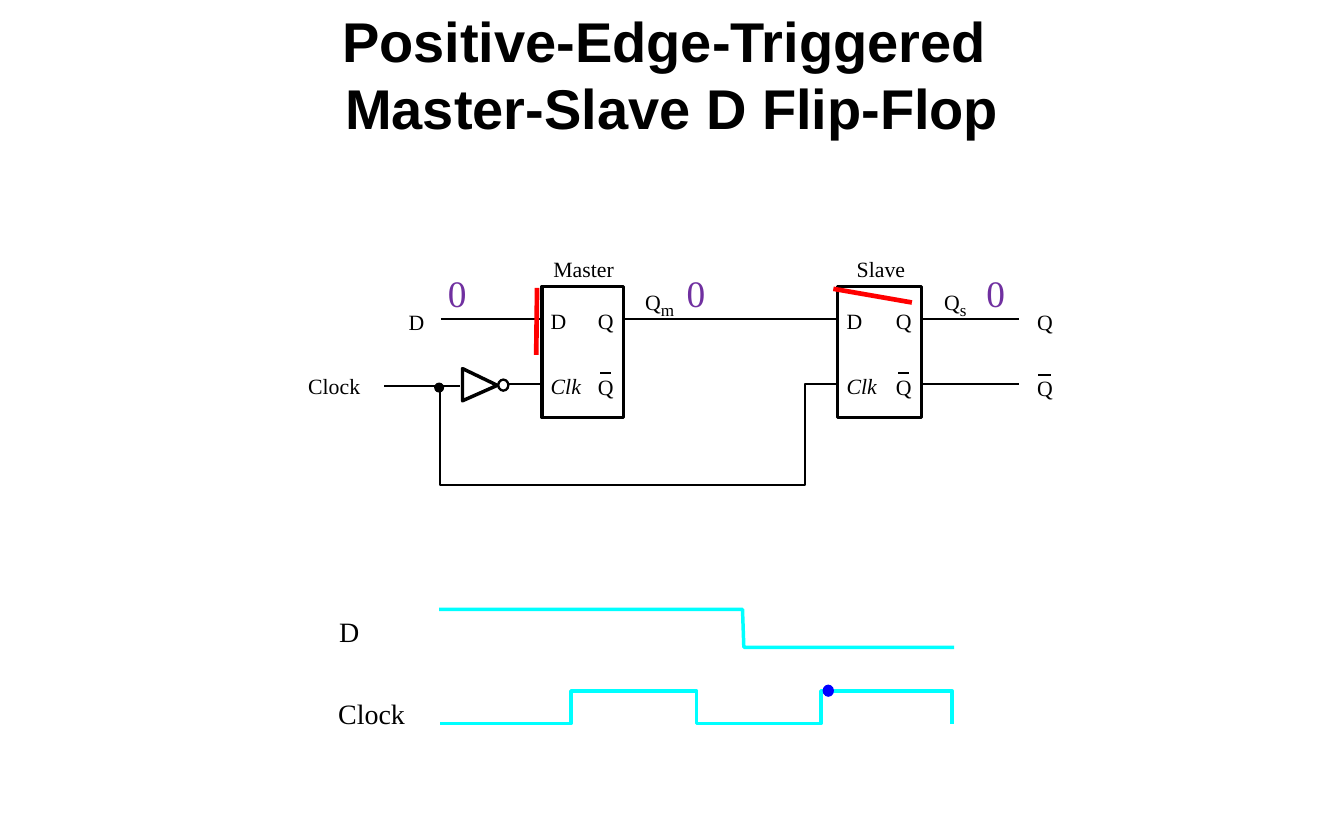
from dataclasses import dataclass

from lxml.etree import SubElement
from pptx import Presentation
from pptx.dml.color import RGBColor as Rgb
from pptx.enum.shapes import MSO_CONNECTOR as Connector, MSO_SHAPE as Preset
from pptx.enum.text import MSO_ANCHOR as Anchor, MSO_AUTO_SIZE as AutoSize, PP_ALIGN as Align
from pptx.oxml.ns import qn
from pptx.util import Cm, Pt


@dataclass(frozen=True)
class Theme:
    ink: Rgb = Rgb(0, 0, 0)
    paper: Rgb = Rgb(255, 255, 255)
    wave: Rgb = Rgb(0, 255, 255)
    marker: Rgb = Rgb(0, 0, 255)
    switch: Rgb = Rgb(255, 0, 0)
    state: Rgb = Rgb(0x70, 0x30, 0xA0)
    title_font: str = "Arial"
    label_font: str = "Times New Roman"
    title_size: float = 36
    state_size: float = 24
    signal_size: float = 18
    pin_size: float = 14
    subscript_size: float = 11
    hairline: float = 0.75
    thin: float = 1.38
    wire: float = 1.5
    outline: float = 2.25
    thick: float = 3


class Diagram:
    """Draws on one slide in a theme; all positions are in centimetres."""

    def __init__(self, slide, theme):
        self.slide = slide
        self.shapes = slide.shapes
        self.theme = theme

    def add_run(self, paragraph, words, size, font, color, bold=None, italic=None):
        run = paragraph.add_run()
        run.text = words
        run.font.size = Pt(size)
        run.font.name = font
        run.font.color.rgb = color
        run.font.bold = bold
        run.font.italic = italic

    def title(self, lines, left, top, width, height):
        heading = self.shapes.title
        heading.left, heading.top = Cm(left), Cm(top)
        heading.width, heading.height = Cm(width), Cm(height)
        frame = heading.text_frame
        frame.auto_size = AutoSize.NONE
        frame.vertical_anchor = Anchor.MIDDLE
        for number, line in enumerate(lines):
            paragraph = frame.add_paragraph() if number else frame.paragraphs[0]
            paragraph.alignment = Align.CENTER
            self.add_run(paragraph, line, self.theme.title_size, self.theme.title_font,
                         self.theme.ink, bold=True)

    def text(self, words, left, top, width, height, size, color=None, italic=None, padded=True):
        frame = self.shapes.add_textbox(Cm(left), Cm(top), Cm(width), Cm(height)).text_frame
        frame.word_wrap = False
        frame.auto_size = AutoSize.SHAPE_TO_FIT_TEXT
        if not padded:
            frame.margin_left = frame.margin_right = Cm(0)
            frame.margin_top = frame.margin_bottom = Cm(0)
        self.add_run(frame.paragraphs[0], words, size, self.theme.label_font,
                     color or self.theme.ink, italic=italic)

    def pin(self, words, left, top, width=0.48, italic=None):
        self.text(words, left, top, width, 0.61, self.theme.pin_size, italic=italic, padded=False)

    def subscripted(self, letter, subscript, left, width):
        self.pin(letter, left, 6.55)
        self.text(subscript, left + 0.36, 6.78, width, 0.48, self.theme.subscript_size,
                  padded=False)

    def paint(self, shape, fill, color, weight):
        shape.shadow.inherit = False
        if fill is None:
            shape.fill.background()
        else:
            shape.fill.solid()
            shape.fill.fore_color.rgb = fill
        shape.line.color.rgb = color
        shape.line.width = Pt(weight)

    def shape(self, preset, left, top, width, height, fill, color, weight):
        item = self.shapes.add_shape(preset, Cm(left), Cm(top), Cm(width), Cm(height))
        self.paint(item, fill, color, weight)

    def outline(self, points, color, weight, fill=None):
        """Join the points; a filled outline is also closed."""
        first, *rest = [(Cm(x), Cm(y)) for x, y in points]
        builder = self.shapes.build_freeform(*first)
        builder.add_line_segments(rest, close=fill is not None)
        self.paint(builder.convert_to_shape(), fill, color, weight)

    def line(self, x1, y1, x2, y2, weight, color=None):
        item = self.shapes.add_connector(Connector.STRAIGHT, Cm(x1), Cm(y1), Cm(x2), Cm(y2))
        item.line.color.rgb = color or self.theme.ink
        item.line.width = Pt(weight)
        SubElement(item._element.spPr, qn("a:effectLst"))

    def latch(self, name, name_left, name_width, left, width):
        theme = self.theme
        output = left + width - 0.58
        self.shape(Preset.RECTANGLE, left, 6.5, width, 2.97, theme.paper, theme.ink, theme.outline)
        self.pin(name, name_left, 5.79, name_width)
        self.pin("D", left + 0.2, 6.98)
        self.pin("Clk", left + 0.2, 8.46, 0.84, italic=True)
        self.pin("Q", output, 6.98)
        self.pin("Q", output, 8.48)
        self.line(output + 0.05, 8.46, output + 0.29, 8.46, theme.thin)


def draw_circuit(diagram, theme):
    data_y, clock_y, input_y, return_y = 7.24, 8.71, 8.76, 11
    master, master_width, slave, slave_width = 12.29, 1.85, 19, 1.9
    slave_end, output_end, branch = slave + slave_width, 23.11, 9.98

    diagram.outline([(slave, clock_y), (18.26, clock_y), (18.26, return_y), (16.03, return_y)],
                    theme.ink, theme.wire)
    diagram.outline([(8.71, input_y), (branch, input_y), (branch, return_y), (11.84, return_y)],
                    theme.ink, theme.wire)
    diagram.line(11.73, return_y, 16.31, return_y, theme.wire)
    diagram.line(11.53, clock_y, master, clock_y, theme.thin)
    for start, end, y in [(10, master, data_y), (master + master_width, slave, data_y),
                          (slave_end, output_end, data_y), (slave_end, output_end, clock_y)]:
        diagram.line(start, y, end, y, theme.wire)

    diagram.latch("Master", 12.55, 1.4, master, master_width)
    diagram.latch("Slave", 19.43, 1.24, slave, slave_width)

    diagram.outline([(11.28, 8.74), (10.49, 9.09), (10.49, 8.36)],
                    theme.ink, theme.outline, theme.paper)
    diagram.shape(Preset.OVAL, 11.3, 8.61, 0.23, 0.25, theme.paper, theme.ink, theme.wire)
    diagram.shape(Preset.OVAL, 9.86, 8.69, 0.2, 0.2, theme.ink, theme.ink, theme.hairline)
    diagram.line(9.7, input_y, 10.44, input_y, theme.thin)

    diagram.pin("D", 9.27, 7.01)
    diagram.pin("Clock", 6.99, 8.46, 1.32)
    diagram.pin("Q", 23.52, 7.01)
    diagram.pin("Q", 23.52, 8.51)
    diagram.line(23.55, 8.51, 23.83, 8.51, theme.thin)
    diagram.subscripted("Q", "m", 14.63, 0.41)
    diagram.subscripted("Q", "s", 21.41, 0.25)

    diagram.line(12.18, 6.53, 12.16, 8.05, theme.thick, theme.switch)
    diagram.line(18.9, 6.55, 20.68, 6.86, theme.thick, theme.switch)
    for left in (9.91, 15.32, 22.12):
        diagram.text("0", left, 6, 0.94, 1.3, theme.state_size, theme.state)


def draw_timing(diagram, theme):
    data_high, data_low = 13.82, 14.68
    diagram.outline([(9.96, data_high), (16.84, data_high), (16.87, data_low), (21.64, data_low)],
                    theme.wave, theme.outline)
    diagram.text("D", 7.44, data_high, 0.97, 1.02, theme.signal_size)

    clock_high, clock_low = 15.67, 16.41
    clock_points, level, other = [(9.98, clock_low)], clock_low, clock_high
    for edge in (12.95, 15.8, 18.62, 21.59):
        clock_points += [(edge, level), (edge, other)]
        level, other = other, level
    diagram.outline(clock_points, theme.wave, theme.outline)
    diagram.text("Clock", 7.42, clock_high, 2.06, 1.02, theme.signal_size)
    diagram.shape(Preset.OVAL, 18.67, 15.54, 0.23, 0.25,
                  theme.marker, theme.marker, theme.hairline)


def main():
    deck = Presentation()
    deck.slide_width, deck.slide_height = Cm(30.48), Cm(19.05)
    title_only = deck.slide_layouts[5]
    theme = Theme()
    diagram = Diagram(deck.slides.add_slide(title_only), theme)
    diagram.title(["Positive-Edge-Triggered ", "Master-Slave D Flip-Flop"], 2.54, 0, 25.4, 3.35)
    draw_circuit(diagram, theme)
    draw_timing(diagram, theme)
    deck.save("out.pptx")


if __name__ == "__main__":
    main()
